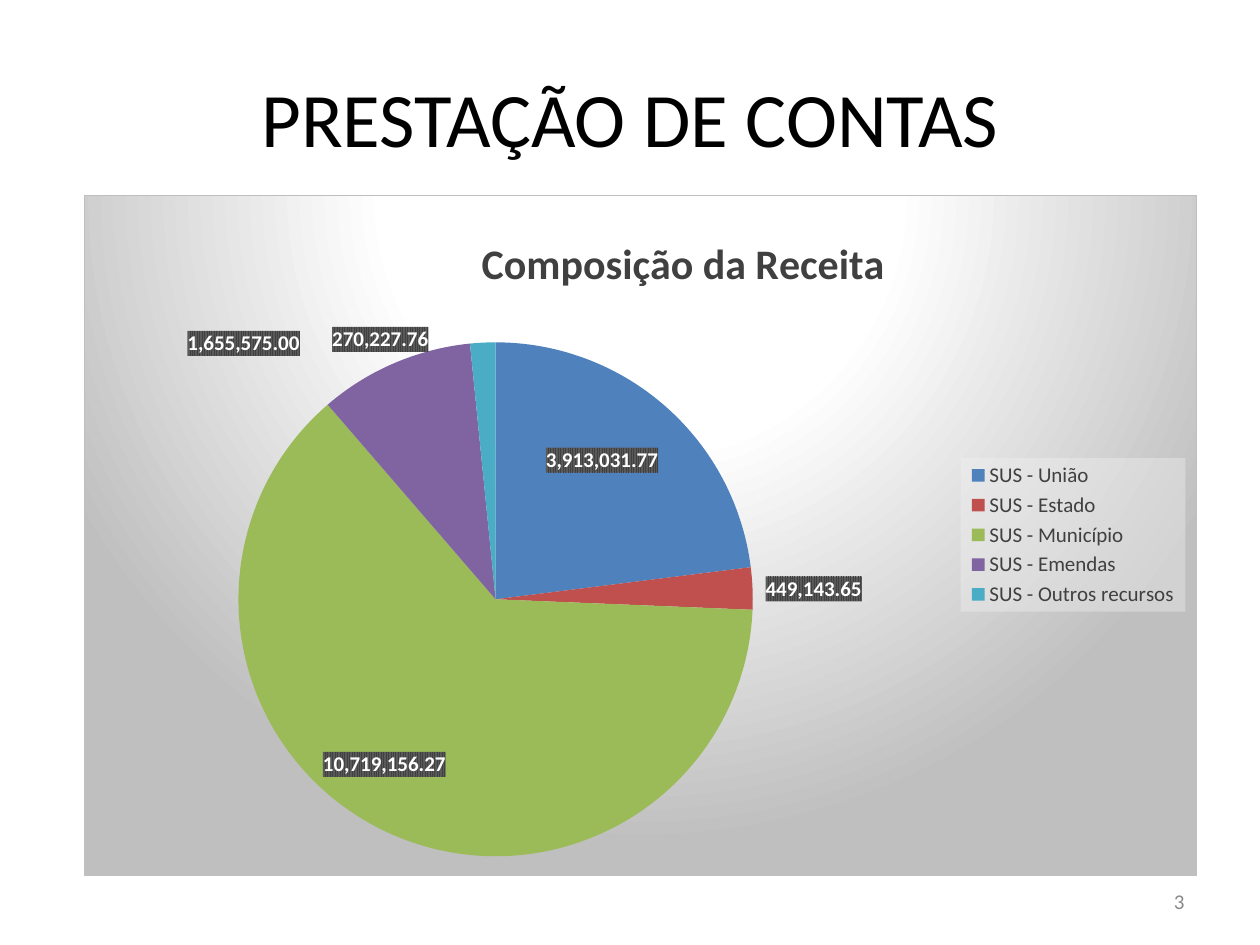
from copy import deepcopy
from math import cos, pi, sin

from lxml.etree import fromstring
from pptx import Presentation
from pptx.chart.data import CategoryChartData
from pptx.dml.color import RGBColor
from pptx.enum.chart import XL_CHART_TYPE as ChartType
from pptx.enum.chart import XL_LABEL_POSITION as LabelPos
from pptx.enum.chart import XL_LEGEND_POSITION as LegendPos
from pptx.enum.text import MSO_ANCHOR as Anchor
from pptx.enum.text import PP_ALIGN as Align
from pptx.util import Pt

PX = 914400 // 126
FONT = "Calibri"
WHITE = RGBColor(0xFF, 0xFF, 0xFF)
BLACK = RGBColor(0, 0, 0)
DARK = RGBColor(0x40, 0x40, 0x40)
LABEL_STRIPE = RGBColor(0x59, 0x59, 0x59)
SILVER = RGBColor(0xBF, 0xBF, 0xBF)
PALE = RGBColor(0xF2, 0xF2, 0xF2)
NUMBER_GREY = RGBColor(0x89, 0x89, 0x89)

# category, value, slice colour, centre of its label in px from the chart corner
REVENUE = [
    ("SUS - União", 3913031.77, RGBColor(0x4F, 0x81, 0xBD), (518, 265)),
    ("SUS - Estado", 449143.65, RGBColor(0xC0, 0x50, 0x4D), (730, 394)),
    ("SUS - Município", 10719156.27, RGBColor(0x9B, 0xBB, 0x59), (300, 570)),
    ("SUS - Emendas", 1655575.00, RGBColor(0x80, 0x64, 0xA2), (159, 148)),
    ("SUS - Outros recursos", 270227.76, RGBColor(0x4B, 0xAC, 0xC6), (296, 144)),
]
PIE_BOX = (154, 147, 515, 515)
NS = ('xmlns:c="http://schemas.openxmlformats.org/drawingml/2006/chart" '
      'xmlns:a="http://schemas.openxmlformats.org/drawingml/2006/main"')


def emu(box):
    return [length * PX for length in box]


def style(font, size, color, bold=False):
    font.name, font.size, font.bold = FONT, Pt(size), bold
    font.color.rgb = color


def shape_props(content):
    return fromstring(f"<c:spPr {NS}>{content}</c:spPr>")


def solid(color, extra=""):
    return f'<a:solidFill><a:srgbClr val="{color}">{extra}</a:srgbClr></a:solidFill>'


def manual_layout(chart_size, place, target="", modes=True):
    """Layout in fractions of the chart, from a place given in px."""
    keys = ("x", "y", "w", "h")[:len(place)]
    parts = [f'<c:layoutTarget val="{target}"/>'] if target else []
    if modes:
        parts += [f'<c:{key}Mode val="edge"/>' for key in "xy"]
    parts += [f'<c:{key} val="{length / chart_size[i % 2]:.4f}"/>'
              for i, (key, length) in enumerate(zip(keys, place))]
    return fromstring(f"<c:layout {NS}><c:manualLayout>{''.join(parts)}"
                      "</c:manualLayout></c:layout>")


def set_layout(element, layout, after=None):
    for old in element.xpath("c:layout"):
        element.remove(old)
    if after is None:
        element.insert(0, layout)
    else:
        element.xpath(after)[0].addnext(layout)


def add_title(slide, box):
    title = slide.shapes.title
    title.left, title.top, title.width, title.height = emu(box)
    title.fill.solid()
    title.fill.fore_color.rgb = WHITE
    frame = title.text_frame
    frame.text = "PRESTAÇÃO DE CONTAS"
    frame.vertical_anchor = Anchor.MIDDLE
    frame.paragraphs[0].alignment = Align.CENTER
    style(frame.paragraphs[0].runs[0].font, 44, BLACK)


def add_slide_number(slide, box):
    frame = slide.shapes.add_textbox(*emu(box)).text_frame
    frame.word_wrap = True
    frame.text = "3"
    frame.vertical_anchor = Anchor.MIDDLE
    frame.paragraphs[0].alignment = Align.RIGHT
    style(frame.paragraphs[0].runs[0].font, 12, NUMBER_GREY)


def format_background(chart):
    stops = "".join(f'<a:gs pos="{pos}000"><a:srgbClr val="{color}"/></a:gs>'
                    for pos, color in ((0, WHITE), (39, WHITE), (100, SILVER)))
    backdrop = shape_props(
        f'<a:gradFill><a:gsLst>{stops}</a:gsLst><a:path path="circle">'
        '<a:fillToRect l="50000" t="-80000" r="50000" b="180000"/></a:path></a:gradFill>'
        f'<a:ln w="9525">{solid(SILVER)}</a:ln>')
    chart.element.xpath("c:chart")[0].addnext(backdrop)


def format_heading(chart, size):
    frame = chart.chart_title.text_frame
    frame.text = "Composição da Receita"
    style(frame.paragraphs[0].runs[0].font, 24, DARK, bold=True)
    heading = chart.element.xpath("c:chart/c:title")[0]
    set_layout(heading, manual_layout(size, (390, 32)), "c:tx")


def format_legend(chart, size):
    chart.has_legend = True
    chart.legend.position = LegendPos.RIGHT
    chart.legend.include_in_layout = False
    style(chart.legend.font, 12, DARK)
    legend = chart.element.xpath("c:chart/c:legend")[0]
    set_layout(legend, manual_layout(size, (877, 263, 225, 154)), "c:legendPos")
    legend.xpath("c:txPr")[0].addprevious(
        shape_props(solid(PALE, '<a:alpha val="39000"/>')))


def label_offsets():
    """Distance of each label from the middle of its slice."""
    left, top, width, height = PIE_BOX
    total = sum(value for _, value, _, _ in REVENUE)
    passed = 0
    for _, value, _, (x, y) in REVENUE:
        angle = 2 * pi * (passed + value / 2) / total
        passed += value
        yield (x - left - width / 2 - width / 4 * sin(angle),
               y - top - height / 2 + height / 4 * cos(angle))


def format_slices(series, size):
    labels = series.data_labels
    labels.show_value = True
    labels.number_format = "#,##0.00"
    labels.number_format_is_linked = False
    labels.position = LabelPos.CENTER
    style(labels.font, 12, WHITE, bold=True)
    group = series.points[0].data_label
    group.position = LabelPos.CENTER
    element = series.data_labels._element
    for leader in element.xpath("c:showLeaderLines"):
        leader.set("val", "0")
    stripes = shape_props(
        f'<a:pattFill prst="narVert"><a:fgClr><a:srgbClr val="{DARK}"/></a:fgClr>'
        f'<a:bgClr><a:srgbClr val="{LABEL_STRIPE}"/></a:bgClr></a:pattFill>')
    element.xpath("c:txPr")[0].addprevious(stripes)

    for i, ((_, _, color, _), offset) in enumerate(zip(REVENUE, label_offsets())):
        point = series.points[i]
        point.format.fill.solid()
        point.format.fill.fore_color.rgb = color
        point.data_label.position = LabelPos.CENTER
        style(point.data_label.font, 12, WHITE, bold=True)
        label = element.xpath(f"c:dLbl[c:idx/@val='{i}']")[0]
        set_layout(label, manual_layout(size, offset, modes=False), "c:idx")
        text = label.xpath("c:txPr")[0]
        for shared in (element.xpath("c:numFmt")[0], stripes):
            text.addprevious(deepcopy(shared))


def add_revenue_chart(slide, box):
    size = box[2:]
    data = CategoryChartData()
    data.categories = [category for category, _, _, _ in REVENUE]
    data.add_series("Series 1", [value for _, value, _, _ in REVENUE])
    chart = slide.shapes.add_chart(ChartType.PIE, *emu(box), data).chart
    style(chart.font, 10, BLACK)
    format_background(chart)
    format_heading(chart, size)
    format_legend(chart, size)
    set_layout(chart.element.xpath("c:chart/c:plotArea")[0],
               manual_layout(size, PIE_BOX, "inner"))
    format_slices(chart.plots[0].series[0], size)


def main():
    deck = Presentation()
    deck.slide_width, deck.slide_height = emu((1260, 945))
    slide = deck.slides.add_slide(deck.slide_layouts[5])
    add_slide_number(slide, (903, 876, 294, 50))
    add_title(slide, (63, 38, 1134, 157))
    add_revenue_chart(slide, (84, 195, 1113, 681))
    deck.save("out.pptx")


if __name__ == "__main__":
    main()
